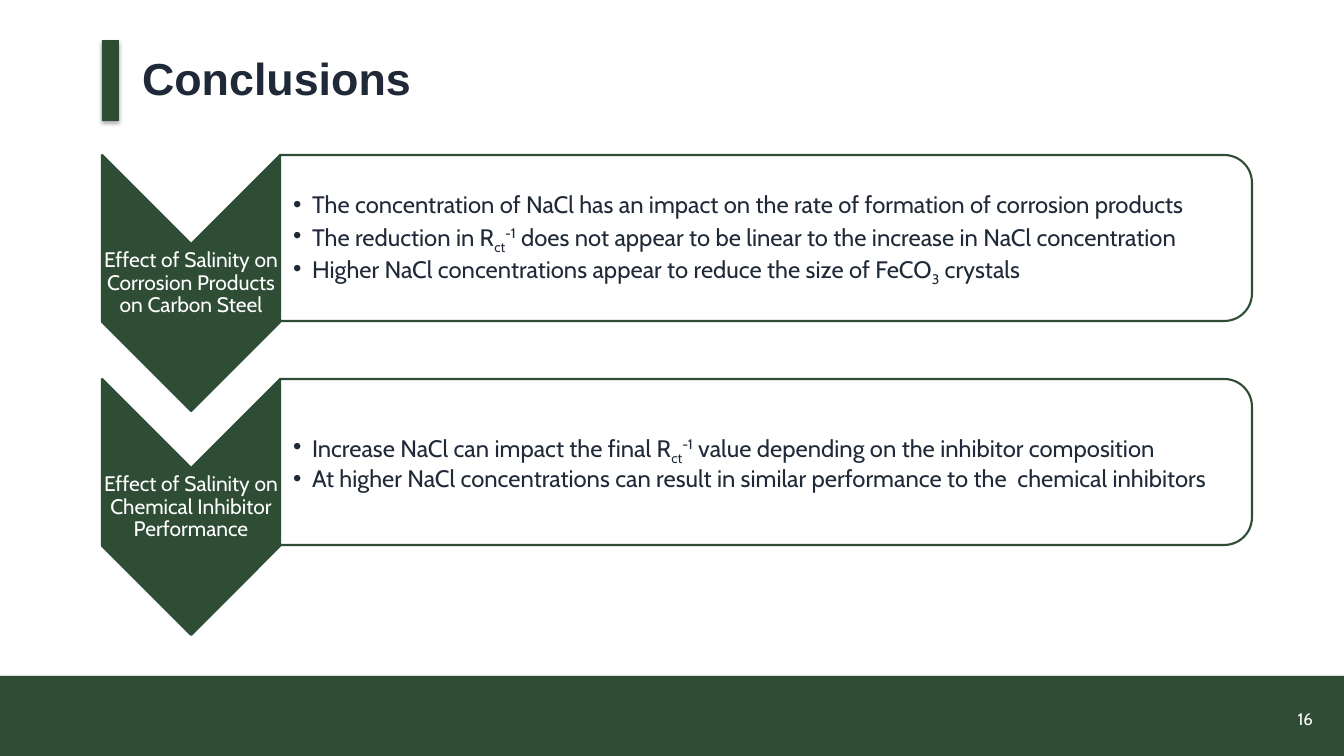
from dataclasses import dataclass

from lxml.etree import SubElement
from pptx import Presentation
from pptx.dml.color import RGBColor
from pptx.enum.shapes import MSO_SHAPE as Preset
from pptx.enum.text import MSO_ANCHOR as Anchor, MSO_AUTO_SIZE as AutoSize, PP_ALIGN as Align
from pptx.oxml.ns import qn
from pptx.util import Emu, Pt

EMU_PER_PX = 914400 / 100.8
PAGE_WIDTH, PAGE_HEIGHT = 1344, 756
ROW_TOP, ROW_STEP = 155, 224


@dataclass(frozen=True)
class Theme:
    green: RGBColor = RGBColor(0x2F, 0x4D, 0x34)
    ink: RGBColor = RGBColor(0x1F, 0x29, 0x37)
    white: RGBColor = RGBColor(0xFF, 0xFF, 0xFF)
    heading_font: str = "Arial"
    body_font: str = "Cabin"
    title_size: int = 32
    list_size: int = 17
    label_size: int = 15
    number_size: int = 12
    outline: float = 1.5


THEME = Theme()
BASELINES = {"sub": "-25000", "sup": "30000"}
RATE = [("ct", "sub"), ("-1", "sup")]

# Each row: chevron label, then bullets made of (text, baseline) spans
ROWS = [
    ("Effect of Salinity on Corrosion Products on Carbon Steel", [
        [("The concentration of NaCl has an impact on the rate of formation "
          "of corrosion products", None)],
        [("The reduction in R", None), *RATE,
         (" does not appear to be linear to the increase in NaCl concentration", None)],
        [("Higher NaCl concentrations appear to reduce the size of FeCO", None),
         ("3", "sub"), (" crystals", None)],
    ]),
    ("Effect of Salinity on Chemical Inhibitor Performance", [
        [("Increase NaCl can impact the final R", None), *RATE,
         (" value depending on the inhibitor composition", None)],
        [("At higher NaCl concentrations can result in similar performance "
          "to the  chemical inhibitors", None)],
    ]),
]


def px(length):
    return Emu(round(length * EMU_PER_PX))


def place(shape, left, top, width, height):
    shape.left, shape.top = px(left), px(top)
    shape.width, shape.height = px(width), px(height)


def set_frame(shape, insets=None):
    frame = shape.text_frame
    frame.word_wrap = True
    frame.auto_size = AutoSize.NONE
    frame.vertical_anchor = Anchor.MIDDLE
    if insets:
        (frame.margin_left, frame.margin_top,
         frame.margin_right, frame.margin_bottom) = map(px, insets)
    return frame


def add_span(para, text, size, color, font=THEME.body_font, bold=False, baseline=None):
    span = para.add_run()
    span.text = text
    span.font.name, span.font.size, span.font.bold = font, Pt(size), bold
    span.font.color.rgb = color
    if baseline:
        span._r.get_or_add_rPr().set("baseline", BASELINES[baseline])


def add_bar(page, left, top, width, height):
    """Green bar with a soft shadow below it."""
    bar = page.shapes.add_shape(Preset.RECTANGLE, *map(px, (left, top, width, height)))
    bar.fill.solid()
    bar.fill.fore_color.rgb = THEME.green
    bar.line.fill.background()
    bar.shadow.inherit = False
    effects = bar._element.spPr.find(qn("a:effectLst"))
    shadow = SubElement(effects, qn("a:outerShdw"), blurRad=str(Pt(3.1)),
                        dist=str(Pt(1.8)), dir="5400000", rotWithShape="0")
    black = SubElement(shadow, qn("a:srgbClr"), val="000000")
    SubElement(black, qn("a:alpha"), val="35000")


def add_turned_shape(page, preset, left, top, width, height, fill, alpha=None):
    """Shape turned a quarter, given by the area it covers on the page."""
    shift = (width - height) // 2
    shape = page.shapes.add_shape(
        preset, px(left + shift), px(top - shift), px(height), px(width))
    shape.rotation = 90
    shape.shadow.inherit = False
    shape.fill.solid()
    shape.fill.fore_color.rgb = fill
    if alpha:
        color = shape._element.spPr.find(qn("a:solidFill")).find(qn("a:srgbClr"))
        SubElement(color, qn("a:alpha"), val=str(alpha * 1000))
    shape.line.color.rgb = THEME.green
    shape.line.width = Pt(THEME.outline)


def add_text(page, area, text, size, align, insets=None):
    box = page.shapes.add_textbox(*map(px, area))
    para = set_frame(box, insets).paragraphs[0]
    para.alignment = align
    para.line_spacing = 0.9
    add_span(para, text, size, THEME.white)


def fill_title(title, text):
    place(title, 132, 40, 1142, 81)
    para = set_frame(title).paragraphs[0]
    para.alignment = Align.LEFT
    para.line_spacing = 0.9
    add_span(para, text, THEME.title_size, THEME.ink, THEME.heading_font, bold=True)


def fill_list(body, top, bullets):
    place(body, 280, top, 963, 150)
    frame = set_frame(body, (13, 1, 1, 1))
    for index, spans in enumerate(bullets):
        para = frame.add_paragraph() if index else frame.paragraphs[0]
        properties = para._p.get_or_add_pPr()
        properties.set("marL", str(px(19)))
        properties.set("indent", str(px(-19)))
        SubElement(properties, qn("a:buFont"), typeface="Arial")
        SubElement(properties, qn("a:buChar"), char="•")
        para.line_spacing = 0.9
        para.space_before = Pt(0)
        para.space_after = Pt(2.6)
        for text, baseline in spans:
            add_span(para, text, THEME.list_size, THEME.ink, baseline=baseline)


def add_row(page, body, top, label, bullets):
    add_turned_shape(page, Preset.CHEVRON, 102, top, 178, 256, THEME.green)
    add_text(page, (102, top + 90, 178, 77), label, THEME.label_size,
             Align.CENTER, (1, 1, 1, 1))
    add_turned_shape(page, Preset.ROUND_2_SAME_RECTANGLE, 280, top, 972, 166,
                     THEME.white, alpha=90)
    # The list sits in front of its panel
    page.shapes._spTree.append(body._element)
    fill_list(body, top + 9, bullets)


def main():
    deck = Presentation()
    deck.slide_width, deck.slide_height = px(PAGE_WIDTH), px(PAGE_HEIGHT)
    page = deck.slides.add_slide(deck.slide_layouts.get_by_name("Two Content"))
    title, *bodies = page.placeholders

    # Footer band, title accent and page number
    add_bar(page, 0, 676, PAGE_WIDTH, 80)
    add_bar(page, 102, 40, 17, 81)
    fill_title(title, "Conclusions")
    add_text(page, (1021, 700, 302, 40), "16", THEME.number_size, Align.RIGHT)

    # Conclusion rows
    for index, (body, (label, bullets)) in enumerate(zip(bodies, ROWS)):
        add_row(page, body, ROW_TOP + index * ROW_STEP, label, bullets)

    deck.save("out.pptx")


if __name__ == "__main__":
    main()
